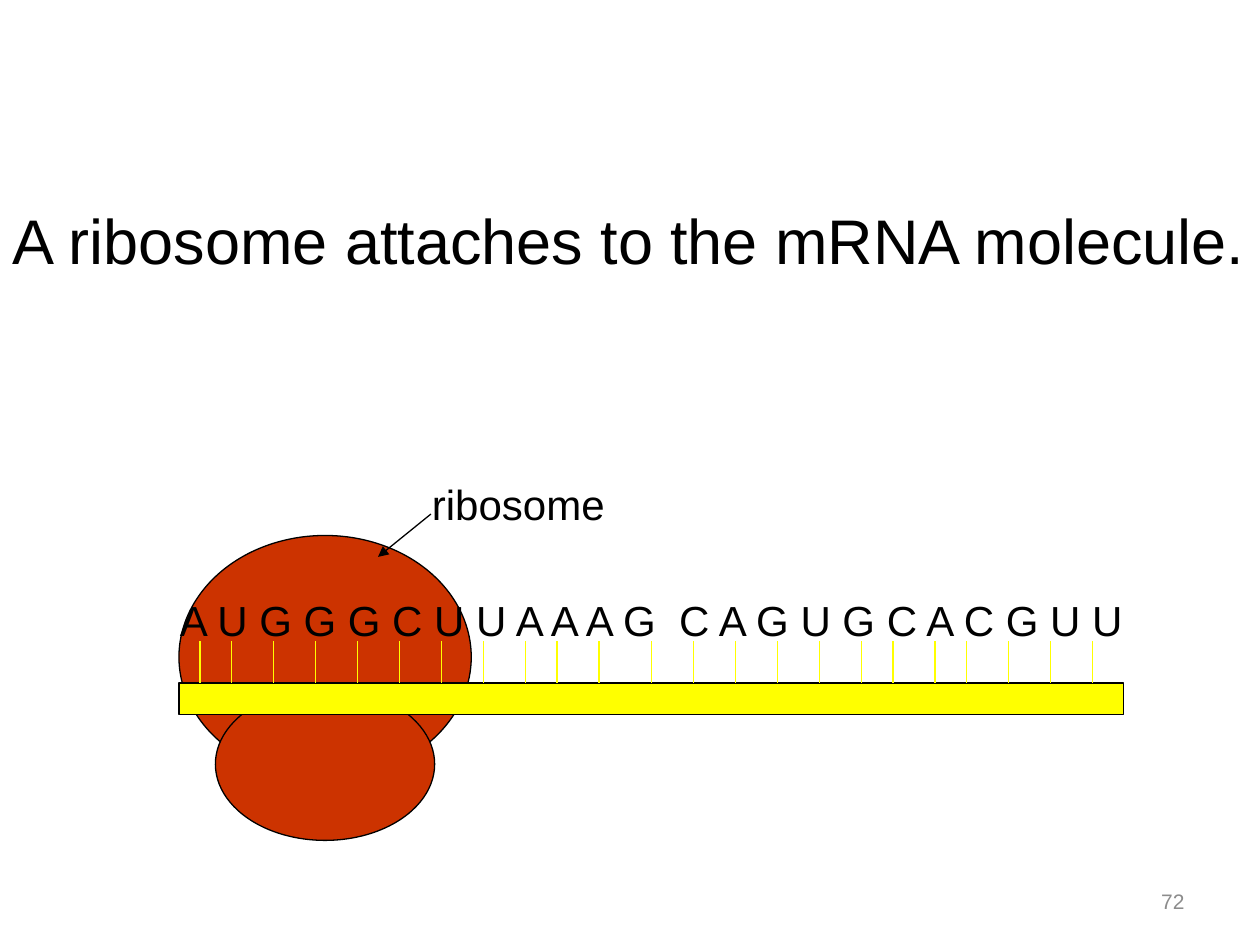
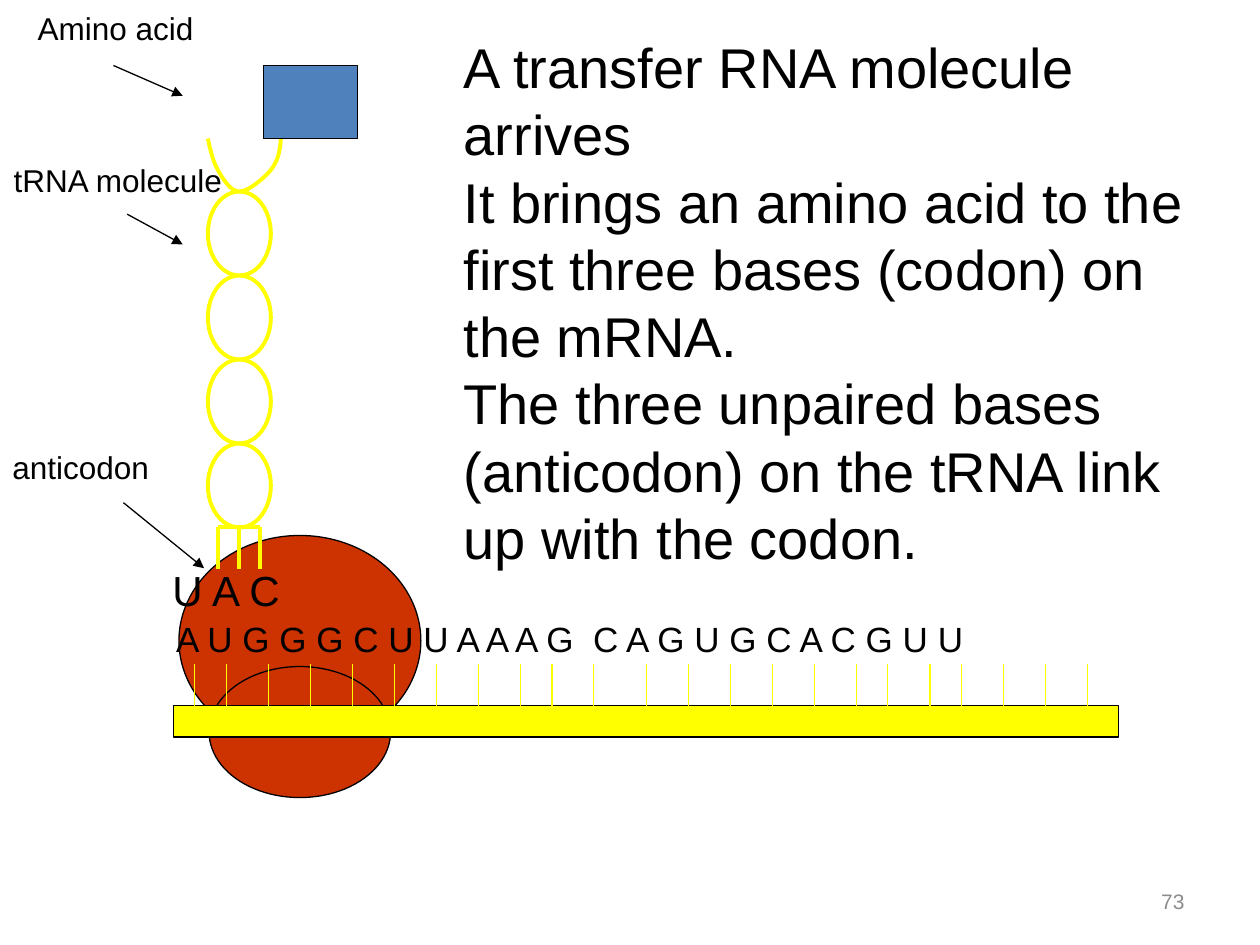
"""Build two slides on how a ribosome and tRNA meet the mRNA strand."""
from dataclasses import dataclass
from itertools import accumulate
from typing import Optional

from lxml.etree import SubElement
from pptx import Presentation
from pptx.dml.color import RGBColor
from pptx.enum.shapes import MSO_CONNECTOR, MSO_SHAPE as SHAPE
from pptx.enum.text import MSO_ANCHOR as ANCHOR, MSO_AUTO_SIZE, PP_ALIGN as ALIGN
from pptx.oxml.ns import qn
from pptx.util import Inches, Pt

BLACK = RGBColor(0x00, 0x00, 0x00)
GREY = RGBColor(0x8C, 0x8C, 0x8C)
RED = RGBColor(0xCC, 0x33, 0x00)
YELLOW = RGBColor(0xFF, 0xFF, 0x00)
BLUE = RGBColor(0x4F, 0x81, 0xBD)

FONT = "Arial"
THIN, THICK = 0.75, 2.25
BASES = "A U G G G C U U A A A G  C A G U G C A C G U U"
TICK_TWELFTHS = [2, 3] + [4] * 7 + [3, 4, 5] + [4] * 5 + [3, 4, 3] + [4] * 3
TICK_LENGTH = 0.33


@dataclass
class Box:
    left: float
    top: float
    width: float
    height: float

    def emu(self) -> list:
        return [Inches(v) for v in (self.left, self.top, self.width, self.height)]


@dataclass
class Label:
    text: str
    box: Box
    size: int
    arrow: Optional[tuple] = None


@dataclass
class Strand:
    bar: Box
    letters: Label


def set_text(sp, lines: list, size: int, color=BLACK, align=ALIGN.LEFT,
             anchor=ANCHOR.TOP) -> None:
    tf = sp.text_frame
    frame = {"word_wrap": True, "auto_size": MSO_AUTO_SIZE.NONE,
             "vertical_anchor": anchor}
    for name, value in frame.items():
        setattr(tf, name, value)
    for i, line in enumerate(lines):
        p = tf.paragraphs[0] if i == 0 else tf.add_paragraph()
        if sp.is_placeholder:
            pPr = p._p.get_or_add_pPr()
            pPr.set("marL", "0")
            pPr.set("indent", "0")
            SubElement(pPr, qn("a:buNone"))
        p.alignment, p.space_before = align, Pt(0)
        r = p.add_run()
        r.text = line
        for name, value in {"name": FONT, "size": Pt(size)}.items():
            setattr(r.font, name, value)
        r.font.color.rgb = color


def fill_placeholder(sp, box: Box, lines: list, size: int) -> None:
    for name, value in zip(("left", "top", "width", "height"), box.emu()):
        setattr(sp, name, value)
    set_text(sp, lines, size)


def set_outline(sp, color: RGBColor, width: float) -> None:
    sp.line.color.rgb = color
    sp.line.width = Pt(width)


def add_shape(slide, kind, box: Box, fill=None, line=BLACK, width=THIN) -> None:
    sp = slide.shapes.add_shape(kind, *box.emu())
    sp.shadow.inherit = False
    if fill is None:
        sp.fill.background()
    else:
        sp.fill.solid()
        sp.fill.fore_color.rgb = fill
    set_outline(sp, line, width)


def add_line(slide, x1: float, y1: float, x2: float, y2: float,
             color=BLACK, width=THIN, arrow=False) -> None:
    ends = [Inches(v) for v in (x1, y1, x2, y2)]
    cxn = slide.shapes.add_connector(MSO_CONNECTOR.STRAIGHT, *ends)
    set_outline(cxn, color, width)
    spPr = cxn.element.spPr
    if arrow:
        SubElement(spPr.find(qn("a:ln")), qn("a:tailEnd"), type="triangle")
    SubElement(spPr, qn("a:effectLst"))


def add_label(slide, label: Label, **style) -> None:
    sp = slide.shapes.add_textbox(*label.box.emu())
    set_text(sp, [label.text], label.size, **style)
    if label.arrow:
        add_line(slide, *label.arrow, arrow=True)


def add_number(slide, number: int) -> None:
    label = Label(str(number), Box(7.17, 6.95, 2.33, 0.4), 12)
    add_label(slide, label, color=GREY, align=ALIGN.RIGHT, anchor=ANCHOR.MIDDLE)


def add_ribosome(slide, large: Box, small: Box) -> None:
    for subunit in (large, small):
        add_shape(slide, SHAPE.OVAL, subunit, RED)


def add_strand(slide, strand: Strand) -> None:
    bar = strand.bar
    add_shape(slide, SHAPE.RECTANGLE, bar, YELLOW)
    add_label(slide, strand.letters)
    for offset in accumulate(TICK_TWELFTHS):
        x = bar.left + offset / 12
        add_line(slide, x, bar.top - TICK_LENGTH, x, bar.top, YELLOW)


def bezier(points: tuple, t: float) -> tuple:
    weights = ((1 - t) ** 3, 3 * t * (1 - t) ** 2, 3 * t * t * (1 - t), t ** 3)
    return tuple(Inches(sum(w * pt[axis] for w, pt in zip(weights, points)))
                 for axis in (0, 1))


def add_trna_fork(slide) -> None:
    nodes = [(1.65, 1.1), (1.67, 1.19), (1.69, 1.28), (1.73, 1.35),
             (1.77, 1.42), (1.83, 1.52), (1.9, 1.52),
             (1.97, 1.52), (2.09, 1.42), (2.15, 1.35),
             (2.2, 1.28), (2.22, 1.23), (2.23, 1.1),
             (2.24, 0.98), (2.23, 0.68), (2.23, 0.6)]
    steps = 10
    curve = [bezier(nodes[i:i + 4], s / steps)
             for i in range(0, len(nodes) - 1, 3) for s in range(1, steps + 1)]
    start = [Inches(v) for v in nodes[0]]
    builder = slide.shapes.build_freeform(*start)
    builder.add_line_segments(curve, close=False)
    sp = builder.convert_to_shape()
    sp.shadow.inherit = False
    sp.fill.background()
    set_outline(sp, YELLOW, THICK)


def add_trna(slide) -> None:
    add_trna_fork(slide)
    add_label(slide, Label("U A C", Box(1.27, 4.43, 1.21, 0.5), 24))
    loop_height = 2 / 3
    for i in range(4):
        loop = Box(1.65, 1.52 + i * loop_height, 0.5, loop_height)
        add_shape(slide, SHAPE.OVAL, loop, line=YELLOW, width=THICK)
    left, right, top, bottom = 1.73, 2.06, 4.18, 4.52
    for x in (left, (left + right) / 2, right):
        add_line(slide, x, top, x, bottom, YELLOW, THICK)
    add_line(slide, left, top, right, top, YELLOW, THICK)
    add_shape(slide, SHAPE.RECTANGLE, Box(2.09, 0.52, 0.75, 0.58), BLUE)


def build_attachment_slide(prs) -> None:
    slide = prs.slides.add_slide(prs.slide_layouts[5])
    fill_placeholder(slide.shapes.title, Box(0, 1.55, 10, 0.71),
                     ["A ribosome attaches to the mRNA molecule."], 36)
    add_ribosome(slide, Box(1.42, 4.25, 2.32, 1.93), Box(1.71, 5.46, 1.74, 1.21))
    add_strand(slide, Strand(Box(1.42, 5.42, 7.5, 0.25),
                             Label(BASES, Box(1.33, 4.67, 7.75, 0.5), 24)))
    add_label(slide, Label("ribosome", Box(3.33, 3.75, 2.08, 0.5), 24,
                           (3.42, 4.08, 3, 4.42)))
    add_number(slide, 72)


def build_transfer_slide(prs) -> None:
    slide = prs.slides.add_slide(prs.slide_layouts[1])
    title = slide.shapes.title.element
    title.getparent().remove(title)
    fill_placeholder(slide.placeholders[1], Box(3.58, 0.21, 6.22, 4.41), [
        "A transfer RNA molecule arrives",
        "It brings an amino acid to the first three bases (codon) on the mRNA.",
        "The three unpaired bases (anticodon) on the tRNA link up with the codon.",
    ], 32)
    add_ribosome(slide, Box(1.42, 4.25, 1.92, 1.67), Box(1.66, 5.29, 1.44, 1.04))
    add_strand(slide, Strand(Box(1.38, 5.6, 7.5, 0.25),
                             Label(BASES, Box(1.3, 4.85, 7.75, 0.44), 20)))
    for label in (
        Label("Amino acid", Box(0.2, 0.02, 2.29, 0.5), 18, (0.9, 0.52, 1.45, 0.76)),
        Label("tRNA molecule", Box(0.01, 1.23, 2.67, 0.5), 18, (1.01, 1.7, 1.45, 1.94)),
        Label("anticodon", Box(0, 3.51, 2.01, 0.4), 18, (0.98, 3.99, 1.62, 4.51)),
    ):
        add_label(slide, label)
    add_trna(slide)
    add_number(slide, 73)


def main() -> None:
    prs = Presentation()
    prs.slide_width, prs.slide_height = Inches(10), Inches(7.5)
    build_attachment_slide(prs)
    build_transfer_slide(prs)
    prs.save("out.pptx")


if __name__ == "__main__":
    main()
